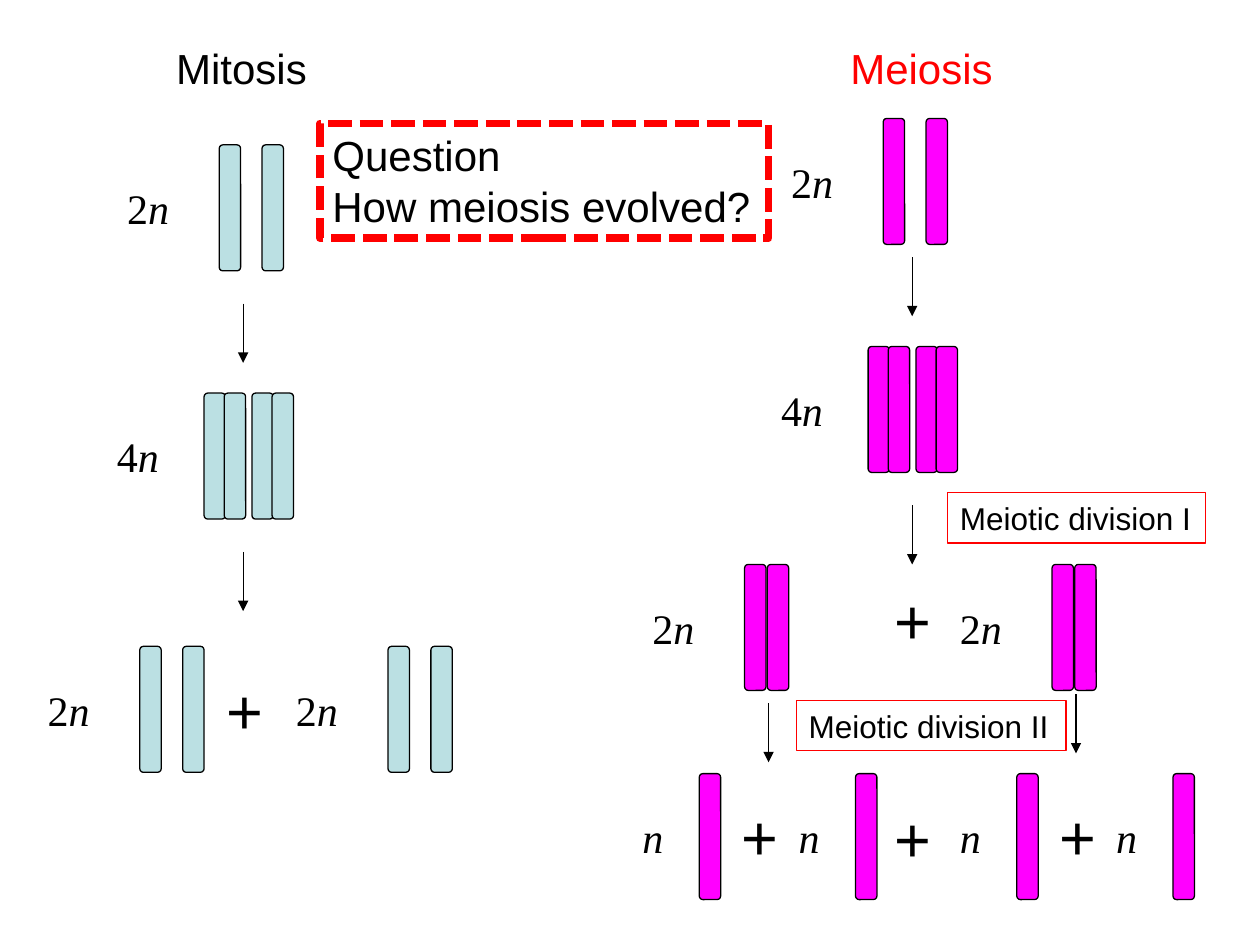
from dataclasses import dataclass

from lxml.etree import SubElement
from pptx import Presentation
from pptx.dml.color import RGBColor
from pptx.enum.dml import MSO_LINE
from pptx.enum.shapes import MSO_CONNECTOR, MSO_SHAPE
from pptx.enum.text import MSO_ANCHOR, MSO_AUTO_SIZE, PP_ALIGN
from pptx.oxml.ns import qn
from pptx.util import Emu, Inches, Pt

BLACK = RGBColor(0x00, 0x00, 0x00)
WHITE = RGBColor(0xFF, 0xFF, 0xFF)
RED = RGBColor(0xFF, 0x00, 0x00)
TEAL = RGBColor(0xBB, 0xE0, 0xE3)
MAGENTA = RGBColor(0xFF, 0x00, 0xFF)

# The slide is a grid of 1000 columns by 750 rows
COLS, ROWS = 1000, 750
SLIDE_W, SLIDE_H = Inches(10), Inches(7.5)
BAR_W, BAR_H = 17, 100
LABEL_W, LABEL_H, LABEL_DROP = 81, 50, 25
PLUS_W, PLUS_H = 49, 70
ARROW_H = 47

# Columns from a label's left edge to each chromosome
SEPARATE = (83, 117)
DOUBLED = (79, 95, 117, 133)
JOINED = (83, 101)
SINGLE = (55,)


@dataclass(frozen=True)
class Cell:
    ploidy: str
    col: int
    row: int
    bars: tuple[int, ...]
    color: RGBColor


@dataclass(frozen=True)
class Box:
    lines: tuple[str, ...]
    col: int
    row: int
    width: int
    height: int
    size: int
    line_width: float = 0.75
    fill: RGBColor | None = None
    dash: MSO_LINE | None = None


CELLS = [
    Cell("2", 91, 115, SEPARATE, TEAL),
    Cell("4", 83, 312, DOUBLED, TEAL),
    *(Cell("2", col, 513, SEPARATE, TEAL) for col in (28, 225)),
    Cell("2", 618, 94, SEPARATE, MAGENTA),
    Cell("4", 610, 275, DOUBLED, MAGENTA),
    *(Cell("2", col, 448, JOINED, MAGENTA) for col in (508, 752)),
    *(Cell("", col, 614, SINGLE, MAGENTA) for col in (500, 624, 752, 876)),
]
ARROWS = [(193, 241), (193, 438), (724, 204), (724, 401), (610, 558), (854, 551)]
PLUSES = [(170, 528), (700, 457), (579, 628), (831, 628), (700, 630)]
HEADINGS = [("Meiosis", 665, 133, RED), ("Mitosis", 130, 124, BLACK)]
BOXES = [
    Box(("Meiotic division II",), 632, 556, 214, 40, 18),
    Box(("Meiotic division I",), 752, 391, 205, 40, 18),
    Box(("Question", "How meiosis evolved?"), 254, 98, 356, 91, 24,
        4.5, WHITE, MSO_LINE.SQUARE_DOT),
]


def x(col: int) -> Emu:
    return Emu(SLIDE_W * col // COLS)


def y(row: int) -> Emu:
    return Emu(SLIDE_H * row // ROWS)


def add_run(p, text: str, size: int, color=BLACK, font="Arial", italic=False) -> None:
    r = p.add_run()
    r.text = text
    r.font.size = Pt(size)
    r.font.name = font
    r.font.color.rgb = color
    r.font.italic = italic


def add_text_box(s, col: int, row: int, width: int, height: int, wrap=False):
    """Add an empty text box and return its first paragraph."""
    tf = s.shapes.add_textbox(x(col), y(row), x(width), y(height)).text_frame
    tf.word_wrap = wrap
    tf.auto_size = MSO_AUTO_SIZE.SHAPE_TO_FIT_TEXT
    return tf.paragraphs[0]


def draw_cell(s, cell: Cell) -> None:
    """Draw the chromosomes with their ploidy label on the left."""
    for offset in cell.bars:
        sp = s.shapes.add_shape(MSO_SHAPE.ROUNDED_RECTANGLE, x(cell.col + offset),
                                y(cell.row), x(BAR_W), y(BAR_H))
        sp.shadow.inherit = False
        sp.fill.solid()
        sp.fill.fore_color.rgb = cell.color
        sp.line.color.rgb = BLACK
        sp.line.width = Pt(0.75)
    p = add_text_box(s, cell.col, cell.row + LABEL_DROP, LABEL_W, LABEL_H, wrap=True)
    if cell.ploidy:
        add_run(p, cell.ploidy, 24, font="Times New Roman")
    add_run(p, "n", 24, font="Times New Roman", italic=True)


def draw_arrow(s, col: int, row: int) -> None:
    line = s.shapes.add_connector(MSO_CONNECTOR.STRAIGHT, x(col), y(row),
                                  x(col), y(row + ARROW_H))
    line.line.color.rgb = BLACK
    line.line.width = Pt(0.75)
    SubElement(line.line._get_or_add_ln(), qn("a:tailEnd"), type="triangle")
    SubElement(line._element.spPr, qn("a:effectLst"))


def draw_box(s, box: Box) -> None:
    sp = s.shapes.add_shape(MSO_SHAPE.RECTANGLE, x(box.col), y(box.row),
                            x(box.width), y(box.height))
    sp.shadow.inherit = False
    if box.fill is None:
        sp.fill.background()
    else:
        sp.fill.solid()
        sp.fill.fore_color.rgb = box.fill
    sp.line.color.rgb = RED
    sp.line.width = Pt(box.line_width)
    if box.dash is not None:
        sp.line.dash_style = box.dash
    tf = sp.text_frame
    tf.word_wrap = False
    tf.auto_size = MSO_AUTO_SIZE.SHAPE_TO_FIT_TEXT
    tf.vertical_anchor = MSO_ANCHOR.TOP
    for i, text in enumerate(box.lines):
        p = tf.add_paragraph() if i else tf.paragraphs[0]
        p.alignment = PP_ALIGN.LEFT
        add_run(p, text, box.size)


def main() -> None:
    prs = Presentation()
    prs.slide_width, prs.slide_height = SLIDE_W, SLIDE_H
    s = prs.slides.add_slide(prs.slide_layouts[6])
    for cell in CELLS:
        draw_cell(s, cell)
    for col, row in ARROWS:
        draw_arrow(s, col, row)
    for col, row in PLUSES:
        add_run(add_text_box(s, col, row, PLUS_W, PLUS_H), "+", 36)
    for text, col, width, color in HEADINGS:
        add_run(add_text_box(s, col, 29, width, 50), text, 24, color)
    for box in BOXES:
        draw_box(s, box)
    prs.save("out.pptx")


if __name__ == "__main__":
    main()
